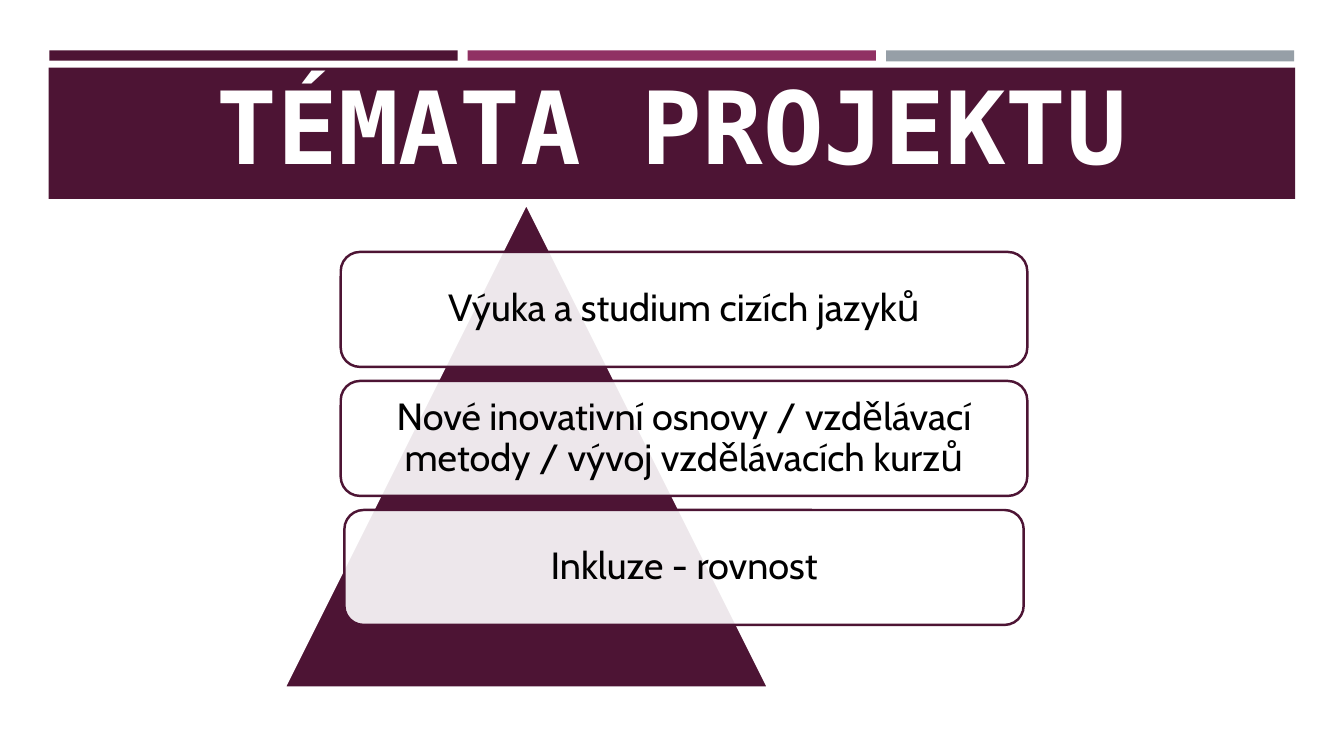
from dataclasses import dataclass

from lxml.etree import SubElement
from pptx import Presentation
from pptx.dml.color import RGBColor
from pptx.enum.shapes import MSO_SHAPE
from pptx.enum.text import MSO_ANCHOR, PP_ALIGN
from pptx.oxml.ns import qn
from pptx.util import Pt

PLUM = RGBColor(0x4D, 0x14, 0x34)
MAGENTA = RGBColor(0x90, 0x31, 0x63)
GREY = RGBColor(0x96, 0x9F, 0xA7)
WHITE = RGBColor(0xFF, 0xFF, 0xFF)
BLACK = RGBColor(0x00, 0x00, 0x00)

BAR_LEFT, BAR_TOP, BAR_WIDTH, BAR_STEP = 35.3, 36, 291.6, 298.8
TOPIC_CENTRE, TOPIC_TOP, TOPIC_HEIGHT, TOPIC_STEP = 488.6, 180, 82.1, 92.15


@dataclass
class Bar:
    colour: RGBColor
    height: float


@dataclass
class Topic:
    text: str
    width: float


BARS = [Bar(PLUM, 7.4), Bar(MAGENTA, 7.4), Bar(GREY, 7.9)]
TOPICS = [
    Topic("Výuka a studium cizích jazyků", 490.4),
    Topic("Nové inovativní osnovy / vzdělávací metody / vývoj vzdělávacích kurzů", 490.4),
    Topic("Inkluze - rovnost", 485.2),
]


def add_shape(page, kind: MSO_SHAPE, left: float, top: float, width: float,
              height: float, fill: RGBColor, line: RGBColor | None = None):
    shape = page.shapes.add_shape(kind, Pt(left), Pt(top), Pt(width), Pt(height))
    shape.shadow.inherit = False
    shape.fill.solid()
    shape.fill.fore_color.rgb = fill
    if line is None:
        shape.line.fill.background()
    else:
        shape.line.color.rgb = line
        shape.line.width = Pt(1.75)
    return shape


def set_opacity(shape, percent: int) -> None:
    colour = shape.fill._xPr.find(qn("a:solidFill"))[0]
    SubElement(colour, qn("a:alpha")).set("val", str(percent * 1000))


def write_text(box, text: str, *, font: str, size: float, colour: RGBColor,
               bold: bool = False, anchor: MSO_ANCHOR = MSO_ANCHOR.MIDDLE,
               inset: float | None = None) -> None:
    frame = box.text_frame
    frame.word_wrap = True
    frame.vertical_anchor = anchor
    if inset is not None:
        frame.margin_left = frame.margin_right = Pt(inset)
        frame.margin_top = frame.margin_bottom = Pt(inset)
    para = frame.paragraphs[0]
    para.alignment = PP_ALIGN.CENTER
    para.line_spacing = 0.9
    span = para.add_run()
    span.text = text
    span.font.name = font
    span.font.size = Pt(size)
    span.font.bold = bold
    span.font.color.rgb = colour


def main() -> None:
    deck = Presentation()
    deck.slide_width, deck.slide_height = Pt(960), Pt(540)
    page = deck.slides.add_slide(deck.slide_layouts[6])

    # Coloured bars above the title band
    for index, bar in enumerate(BARS):
        add_shape(page, MSO_SHAPE.RECTANGLE, BAR_LEFT + index * BAR_STEP, BAR_TOP,
                  BAR_WIDTH, bar.height, bar.colour)

    # Title band and title
    add_shape(page, MSO_SHAPE.RECTANGLE, 34.8, 48.4, 890.4, 93.7, PLUM)
    title = page.shapes.add_textbox(Pt(0), Pt(37.4), Pt(960), Pt(99.4))
    write_text(title, "TÉMATA PROJEKTU", font="DejaVu Sans Mono", size=72,
               colour=WHITE, bold=True, anchor=MSO_ANCHOR.BOTTOM)

    # Pyramid behind the topics
    add_shape(page, MSO_SHAPE.ISOSCELES_TRIANGLE, 203.2, 145.6, 345.6, 345.6, PLUM, WHITE)

    # Topic boxes, centred on one axis
    for index, topic in enumerate(TOPICS):
        box = add_shape(page, MSO_SHAPE.ROUNDED_RECTANGLE, TOPIC_CENTRE - topic.width / 2,
                        TOPIC_TOP + index * TOPIC_STEP, topic.width, TOPIC_HEIGHT,
                        WHITE, PLUM)
        set_opacity(box, 90)
        write_text(box, topic.text, font="Cabin", size=27, colour=BLACK, inset=8)

    deck.save("out.pptx")


if __name__ == "__main__":
    main()
